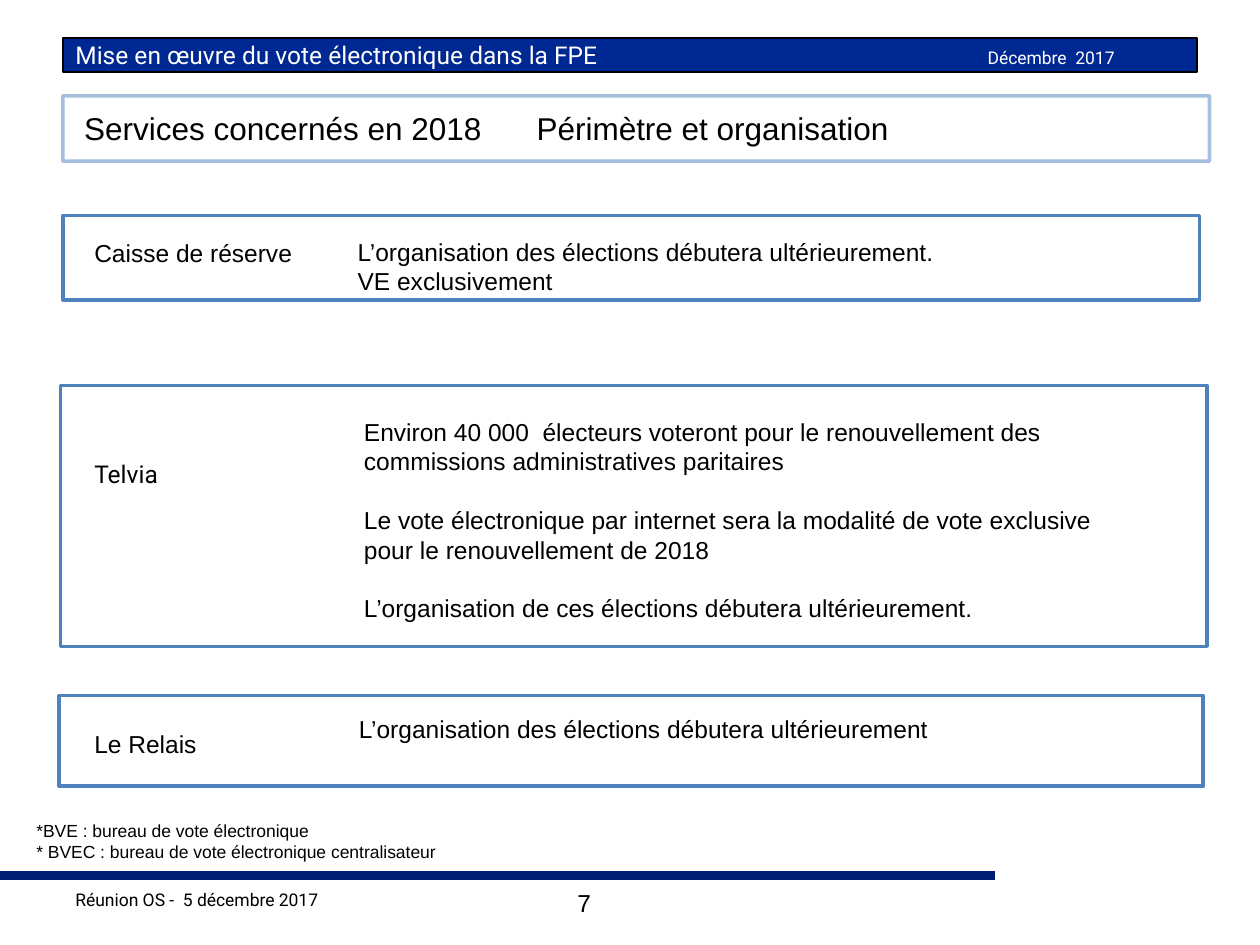
from lxml import etree
from pptx import Presentation
from pptx import util as u
from pptx.dml.color import RGBColor
from pptx.enum import shapes, text
from pptx.oxml import ns

BLACK = RGBColor(0x00, 0x00, 0x00)
WHITE = RGBColor(0xFF, 0xFF, 0xFF)
BANNER = RGBColor(0x00, 0x28, 0x92)
RULE = RGBColor(0x00, 0x1D, 0x72)
FRAME = RGBColor(0x4F, 0x81, 0xBD)


class SlideBuilder:
    def __init__(self, slide, font="Arial", size=14, color=BLACK):
        self.s = slide
        self.style = {"name": font, "size": size, "color": color}

    def set_font(self, font, **changes):
        fmt = {**self.style, **changes}
        font.color.rgb = fmt.pop("color")
        fmt["size"] = u.Pt(fmt["size"])
        for key, value in fmt.items():
            setattr(font, key, value)

    def box(self, at, line, fill=None, alpha=None, width=2):
        sp = self.s.shapes.add_shape(
            shapes.MSO_SHAPE.RECTANGLE, *map(u.Inches, at))
        sp.shadow.inherit = False
        if fill is None:
            sp.fill.background()
        else:
            sp.fill.solid()
            sp.fill.fore_color.rgb = fill
        sp.line.color.rgb = line
        sp.line.width = u.Pt(width)
        if alpha:
            clr = sp.line._get_or_add_ln().find(".//" + ns.qn("a:srgbClr"))
            etree.SubElement(clr, ns.qn("a:alpha"), val=str(alpha * 1000))
        return sp

    def rule(self, start, end, color, width):
        ln = self.s.shapes.add_connector(
            shapes.MSO_CONNECTOR.STRAIGHT, *map(u.Inches, start + end))
        ln.line.color.rgb = color
        ln.line.width = u.Pt(width)
        etree.SubElement(ln._element.spPr, ns.qn("a:effectLst"))

    def text(self, at, *lines, gap=0, align=text.PP_ALIGN.LEFT,
             anchor=text.MSO_ANCHOR.TOP, **font):
        sp = self.s.shapes.add_textbox(*map(u.Inches, at))
        tf = sp.text_frame
        for key, value in {"word_wrap": True, "vertical_anchor": anchor}.items():
            setattr(tf, key, value)
        for i, line in enumerate(lines):
            p = tf.add_paragraph() if i else tf.paragraphs[0]
            p.alignment = align
            if i:
                p.space_before = u.Pt(gap)
            r = p.add_run()
            r.text = line
            self.set_font(r.font, **font)

    def banner(self, at, title, date, tab):
        sp = self.box(at, BLACK, BANNER, width=1.25)
        tf = sp.text_frame
        tf.vertical_anchor = text.MSO_ANCHOR.MIDDLE
        p = tf.paragraphs[0]
        p.alignment = text.PP_ALIGN.LEFT
        tabs = etree.SubElement(p._p.get_or_add_pPr(), ns.qn("a:tabLst"))
        etree.SubElement(tabs, ns.qn("a:tab"), pos=str(u.Inches(tab)), algn="l")
        for words, size in ((title + "\t", 14), (date, 10)):
            r = p.add_run()
            r.text = words
            self.set_font(r.font, name="Roboto", size=size, color=WHITE)


def main():
    prs = Presentation()
    prs.slide_width, prs.slide_height = u.Inches(10), u.Inches(7.5)
    b = SlideBuilder(prs.slides.add_slide(prs.slide_layouts[6]))

    b.rule((0, 6.95), (7.9, 6.95), RULE, 5)
    b.banner((0.5, 0.3, 9, 0.27),
             "Mise en œuvre du vote électronique dans la FPE",
             "Décembre  2017", 7.24)

    b.box((0.5, 0.76, 9.1, 0.52), FRAME, alpha=50)
    b.text((0.57, 0.82, 3.46, 0.4), "Services concernés en 2018", size=18)
    b.text((4.16, 0.82, 4.98, 0.4), "Périmètre et organisation", size=18)

    b.box((0.5, 1.71, 9.02, 0.67), FRAME)
    b.text((0.65, 1.84, 2, 0.34), "Caisse de réserve")
    b.text((2.74, 1.83, 6, 0.57),
           "L’organisation des élections débutera ultérieurement.",
           "VE exclusivement")

    b.box((0.48, 3.06, 9.1, 2.07), FRAME)
    b.text((0.65, 3.59, 2, 0.34), "Telvia", name="Roboto")
    b.text((2.79, 3.26, 6.35, 1.99),
           "Environ 40 000  électeurs voteront pour le renouvellement des "
           "commissions administratives paritaires",
           "Le vote électronique par internet sera la modalité de vote "
           "exclusive pour le renouvellement de 2018",
           "L’organisation de ces élections débutera ultérieurement.",
           gap=16.8)

    b.box((0.47, 5.52, 9.08, 0.72), FRAME)
    b.text((0.65, 5.74, 2, 0.34), "Le Relais")
    b.text((2.75, 5.62, 6, 0.34),
           "L’organisation des élections débutera ultérieurement")

    b.text((0.19, 6.46, 3.64, 0.44),
           "*BVE : bureau de vote électronique",
           "* BVEC : bureau de vote électronique centralisateur", size=10)
    b.text((0.5, 7.05, 7.12, 0.22), "Réunion OS -  5 décembre 2017",
           anchor=text.MSO_ANCHOR.BOTTOM, name="Roboto", size=10)
    b.text((2.46, 7, 2.33, 0.52), "7", align=text.PP_ALIGN.RIGHT)

    prs.save("out.pptx")


if __name__ == "__main__":
    main()
